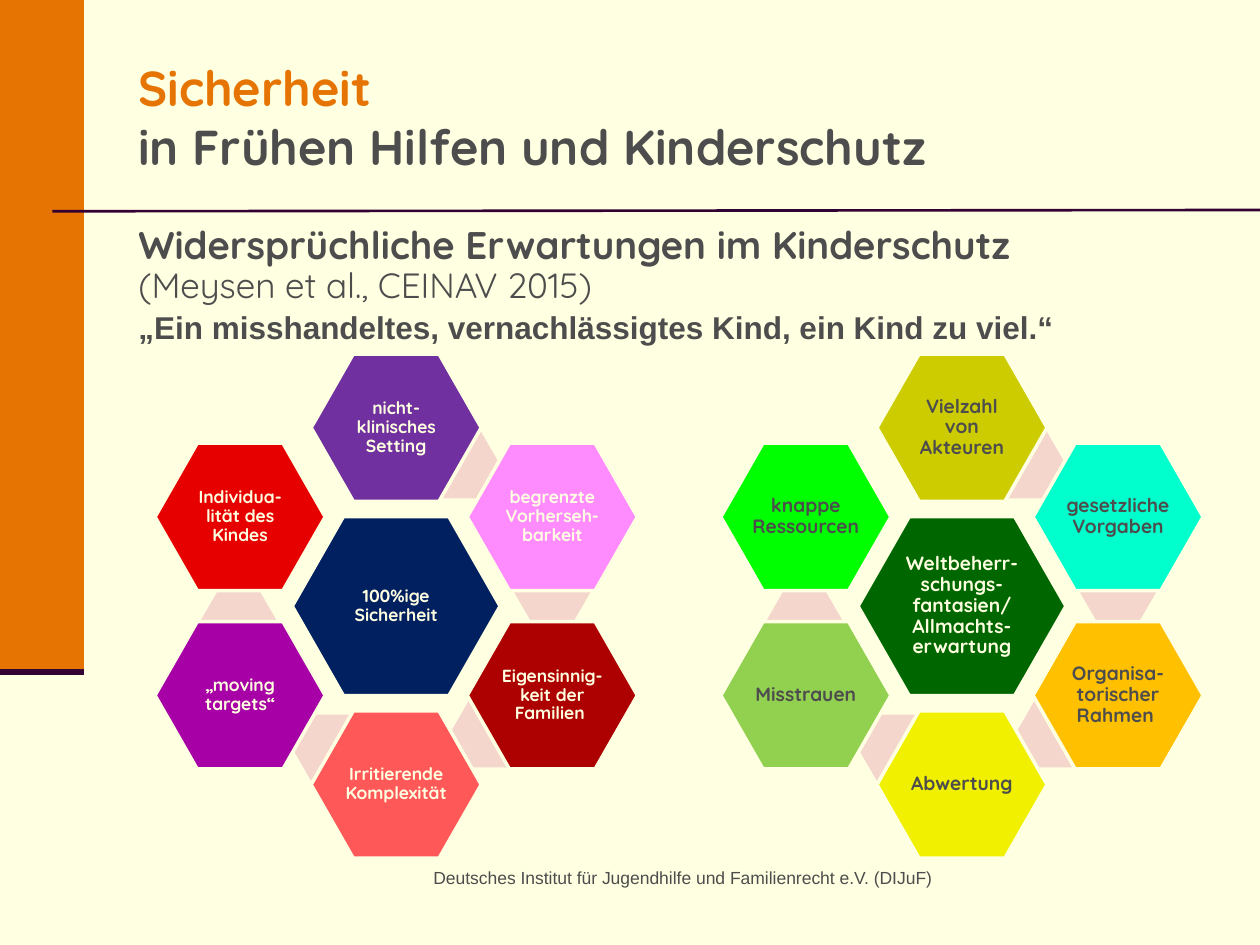
from lxml.etree import SubElement
from pptx import Presentation
from pptx.dml.color import RGBColor
from pptx.enum.shapes import MSO_CONNECTOR, MSO_SHAPE
from pptx.enum.text import MSO_ANCHOR, PP_ALIGN
from pptx.oxml.ns import qn
from pptx.util import Pt

CREAM = RGBColor(0xFF, 0xFF, 0xE1)
ORANGE = RGBColor(0xE6, 0x74, 0x02)
PLUM = RGBColor(0x33, 0x00, 0x33)
GREY = RGBColor(0x4D, 0x4D, 0x4D)
BLUSH = RGBColor(0xF5, 0xD6, 0xCC)
NAVY = RGBColor(0x00, 0x20, 0x60)
VIOLET = RGBColor(0x70, 0x30, 0xA0)
PINK = RGBColor(0xFF, 0x8C, 0xFF)
DARK_RED = RGBColor(0xAD, 0x00, 0x00)
CORAL = RGBColor(0xFF, 0x58, 0x58)
MAGENTA = RGBColor(0xA6, 0x00, 0xA6)
RED = RGBColor(0xE7, 0x00, 0x00)
DARK_GREEN = RGBColor(0x00, 0x66, 0x00)
OLIVE = RGBColor(0xCC, 0xCC, 0x00)
TURQUOISE = RGBColor(0x00, 0xFF, 0xCC)
AMBER = RGBColor(0xFF, 0xC0, 0x00)
YELLOW = RGBColor(0xF0, 0xF0, 0x00)
LIGHT_GREEN = RGBColor(0x92, 0xD0, 0x50)
GREEN = RGBColor(0x00, 0xFF, 0x00)
HEADING, PLAIN = "Quicksand", "Arial"

# Content: paragraphs are lists of (text, font, size, colour, bold)
TITLE = [[("Sicherheit \n", HEADING, 28, ORANGE, True),
          ("in Frühen Hilfen und Kinderschutz", HEADING, 28, GREY, True)]]
INTRO = [
    [("Widersprüchliche Erwartungen im Kinderschutz\n", HEADING, 22, GREY, True),
     ("(Meysen et al., CEINAV 2015)", HEADING, 20, GREY, False)],
    [("„Ein misshandeltes, vernachlässigtes Kind, ein Kind zu viel.“",
      PLAIN, 18, GREY, True)],
]
FOOTER = [[("Deutsches Institut für Jugendhilfe und Familienrecht e.V. (DIJuF)",
            PLAIN, 10, GREY, False)]]

# Petals run clockwise from the top
FLOWERS = [
    {"center_x": 226.4, "size": 10, "inset": 0.7, "petal_text": CREAM,
     "core": ("100%ige Sicherheit", NAVY),
     "petals": [("nicht-klinisches Setting", VIOLET),
                ("begrenzte Vorherseh-barkeit", PINK),
                ("Eigensinnig-keit der Familien ", DARK_RED),
                ("Irritierende Komplexität", CORAL),
                ("„moving targets“", MAGENTA),
                ("Individua-lität des Kindes", RED)]},
    {"center_x": 549.7, "size": 11, "inset": 1.4, "petal_text": GREY,
     "core": ("Weltbeherr-schungs-\nfantasien/\nAllmachts-erwartung", DARK_GREEN),
     "petals": [("Vielzahl von Akteuren", OLIVE),
                ("gesetzliche Vorgaben", TURQUOISE),
                ("Organisa-torischer\nRahmen ", AMBER),
                ("Abwertung", YELLOW),
                ("Misstrauen", LIGHT_GREEN),
                ("knappe Ressourcen", GREEN)]},
]

# Flower geometry: offsets from the core's centre
CENTER_Y = 346.4
CORE, PETAL, LINK = (118.8, 102.4), (97.2, 84.2), (44.6, 38.9)
DX, DY = 89.2, 51
PETAL_OFFSETS = [(0, -2 * DY), (DX, -DY), (DX, DY), (0, 2 * DY), (-DX, DY), (-DX, -DY)]
LINK_OFFSETS = [(37, -81), (89.2, -8.8), (53, 72.7), (-37, 81.4), (-90, 9.2)]


def write(frame, paragraphs, align=PP_ALIGN.LEFT, spacing=1.0, gap=0):
    frame.word_wrap = True
    for i, runs in enumerate(paragraphs):
        para = frame.paragraphs[0] if i == 0 else frame.add_paragraph()
        para.alignment, para.line_spacing = align, spacing
        para.space_before = Pt(gap if i else 0)
        for text, font, size, colour, bold in runs:
            for j, line in enumerate(text.split("\n")):
                if j:
                    para.add_line_break()
                if line:
                    run = para.add_run()
                    run.text = line
                    run.font.name, run.font.size = font, Pt(size)
                    run.font.bold, run.font.color.rgb = bold, colour


def add_text(left, top, width, height, paragraphs, anchor=MSO_ANCHOR.TOP, **style):
    frame = slide.shapes.add_textbox(Pt(left), Pt(top), Pt(width), Pt(height)).text_frame
    frame.vertical_anchor = anchor
    write(frame, paragraphs, **style)


def add_rule(x1, y1, x2, y2, weight):
    rule = slide.shapes.add_connector(MSO_CONNECTOR.STRAIGHT, Pt(x1), Pt(y1), Pt(x2), Pt(y2))
    rule.line.color.rgb, rule.line.width = PLUM, Pt(weight)
    SubElement(rule._element.spPr, qn("a:effectLst"))


def add_hexagon(group, center, size, fill, adjust):
    (x, y), (w, h) = center, size
    hexagon = group.shapes.add_shape(MSO_SHAPE.HEXAGON, Pt(x - w / 2), Pt(y - h / 2), Pt(w), Pt(h))
    hexagon.adjustments[0] = adjust
    hexagon.shadow.inherit = False
    hexagon.fill.solid()
    hexagon.fill.fore_color.rgb = fill
    hexagon.line.fill.background()
    return hexagon


def add_labelled_hexagon(group, center, size, item, text_colour, flower):
    text, fill = item
    hexagon = add_hexagon(group, center, size, fill, 0.286)
    hexagon.line.color.rgb, hexagon.line.width = CREAM, Pt(2)
    frame = hexagon.text_frame
    frame.margin_left = frame.margin_right = Pt(flower["inset"])
    frame.margin_top = frame.margin_bottom = Pt(flower["inset"])
    frame.vertical_anchor = MSO_ANCHOR.MIDDLE
    write(frame, [[(text, HEADING, flower["size"], text_colour, True)]],
          align=PP_ALIGN.CENTER, spacing=0.9)


def add_flower(flower):
    group = slide.shapes.add_group_shape()

    def place(offset):
        return flower["center_x"] + offset[0], CENTER_Y + offset[1]

    add_labelled_hexagon(group, place((0, 0)), CORE, flower["core"], CREAM, flower)
    for i, petal in enumerate(flower["petals"]):
        if i < len(LINK_OFFSETS):
            add_hexagon(group, place(LINK_OFFSETS[i]), LINK, BLUSH, 0.289)
        add_labelled_hexagon(group, place(PETAL_OFFSETS[i]), PETAL, petal,
                             flower["petal_text"], flower)


prs = Presentation()
prs.slide_width, prs.slide_height = Pt(720), Pt(540)
slide = prs.slides.add_slide(prs.slide_layouts[6])
slide.background.fill.solid()
slide.background.fill.fore_color.rgb = CREAM

# Side band and rules
band = slide.shapes.add_shape(MSO_SHAPE.RECTANGLE, Pt(0), Pt(0), Pt(48), Pt(384))
band.shadow.inherit = False
band.fill.solid()
band.fill.fore_color.rgb = ORANGE
band.line.fill.background()
add_rule(30, 120.75, 720, 120, 1.5)
add_rule(0, 384, 48, 384, 3.5)

# Footer, title and introduction
add_text(186, 492, 408, 36, FOOTER, align=PP_ALIGN.CENTER)
add_text(72, 21.6, 474, 90, TITLE, anchor=MSO_ANCHOR.MIDDLE)
add_text(72, 126, 572, 356, INTRO, spacing=0.9, gap=3.6)

# Hexagon flowers
for flower in FLOWERS:
    add_flower(flower)

prs.save("out.pptx")
